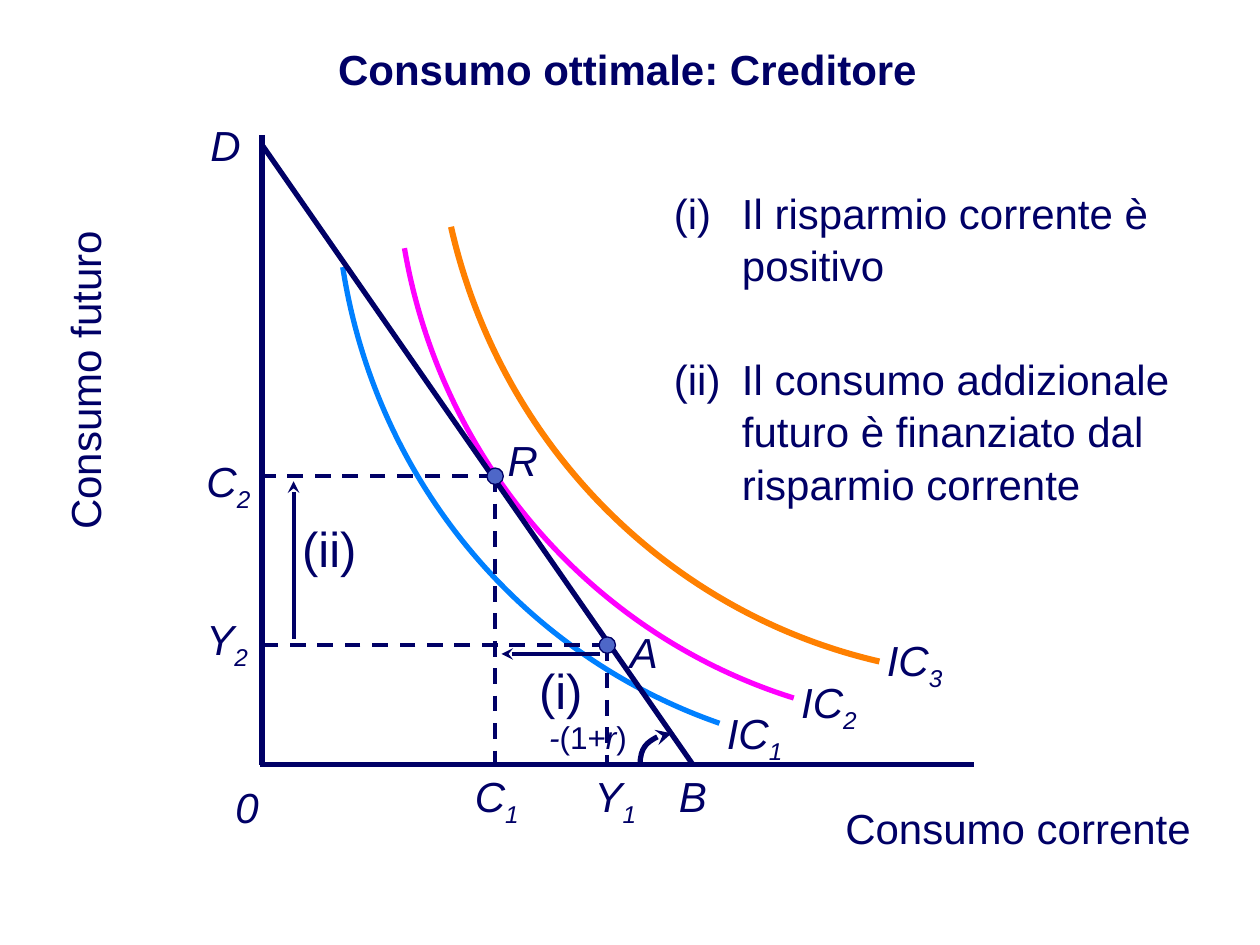
from dataclasses import dataclass

from lxml.etree import SubElement
from pptx import Presentation
from pptx.dml.color import RGBColor as Color
from pptx.enum.dml import MSO_LINE_DASH_STYLE as Dash
from pptx.enum.shapes import MSO_CONNECTOR as Connector, MSO_SHAPE as Shape
from pptx.enum.text import MSO_ANCHOR as Anchor, MSO_AUTO_SIZE as AutoSize, PP_ALIGN as Align
from pptx.oxml.ns import qn
from pptx.util import Inches, Pt


@dataclass(frozen=True)
class Theme:
    font: str = "Arial"
    ink: str = "000066"
    point: str = "4E67C8"
    low: str = "0080FF"
    middle: str = "FF00FF"
    high: str = "FF8000"
    small: int = 18
    body: int = 24
    large: int = 28


theme = Theme()
deck = Presentation()
deck.slide_width, deck.slide_height = Inches(10), Inches(7.5)
page = deck.slides.add_slide(deck.slide_layouts[5])
shapes = page.shapes
column = deck.slide_width / 100
row = deck.slide_height / 75


def add_span(para, text, size=theme.body, italic=False, bold=False, subscript=False):
    span = para.add_run()
    span.text = text
    font = span.font
    font.name, font.size, font.italic, font.bold = theme.font, Pt(size), italic, bold
    font.color.rgb = Color.from_string(theme.ink)
    if subscript:
        span._r.get_or_add_rPr().set("baseline", "-25000")


def style_line(shape, width, color=theme.ink, dashed=False, arrow=None):
    line = shape.line
    line.width = Pt(width)
    line.color.rgb = Color.from_string(color)
    if dashed:
        line.dash_style = Dash.DASH
    properties = shape._element.spPr
    if arrow:
        SubElement(properties.find(qn("a:ln")), qn(f"a:{arrow}")).set("type", "stealth")
    SubElement(properties, qn("a:effectLst"))


title = shapes.title
title.left, title.top = 0, round(2.1 * row)
title.width, title.height = round(99.6 * column), round(6.7 * row)
title.text_frame.auto_size = AutoSize.NONE
title.text_frame.vertical_anchor = Anchor.MIDDLE
para = title.text_frame.paragraphs[0]
para.alignment = Align.CENTER
add_span(para, "Consumo ottimale: Creditore", bold=True)

axis_x, axis_y = 20.8, 60.7
optimum_x, optimum_y = 39.3, 37.8
income_x, income_y = 48.2, 51.2

curves = [
    (theme.low, 3, None, [(27.2, 21.2), (29.8, 38), (41.3, 51.9), (57.1, 57.4)]),
    (theme.middle, 3, None, [(32.1, 19.7), (35, 36.6), (47, 50.4), (63, 55.4)]),
    (theme.high, 3.5, None, [(35.8, 18), (39.7, 35.2), (52.9, 48.6), (69.8, 52.5)]),
    (theme.ink, 3, "headEnd", [(53.3, 58.2), (52, 58.2), (50.8, 59.3), (50.8, axis_y)]),
]
for color, width, arrow, controls in curves:
    start, *bends = [(round(x * column), round(y * row)) for x, y in controls]
    builder = shapes.build_freeform(*start)
    builder.add_line_segments(bends, close=False)
    curve = builder.convert_to_shape()
    curve.fill.background()
    path = curve._element.find(".//" + qn("a:path"))
    segments = path.findall(qn("a:lnTo"))
    bezier = SubElement(path, qn("a:cubicBezTo"))
    for segment in segments:
        bezier.append(segment[0])
        path.remove(segment)
    style_line(curve, width, color, arrow=arrow)

lines = [
    ((axis_x, 10.7), (axis_x, axis_y), 3, False, None),
    ((20.6, axis_y), (77.3, axis_y), 3, False, None),
    ((55, axis_y), (axis_x, 11.5), 3, False, None),
    ((income_x, income_y), (axis_x, income_y), 2.25, True, None),
    ((income_x, income_y), (income_x, axis_y), 2.25, True, None),
    ((optimum_x, optimum_y), (axis_x, optimum_y), 2.25, True, None),
    ((optimum_x, optimum_y), (optimum_x, axis_y), 2.25, True, None),
    ((47.6, 51.9), (39.8, 51.9), 2.25, False, "tailEnd"),
    ((23.3, 50.7), (23.3, 38.2), 2.25, False, "tailEnd"),
]
for (x1, y1), (x2, y2), width, dashed, arrow in lines:
    ends = [round(v) for v in (x1 * column, y1 * row, x2 * column, y2 * row)]
    connector = shapes.add_connector(Connector.STRAIGHT, *ends)
    style_line(connector, width, dashed=dashed, arrow=arrow)

dot = 1.3
for x, y in [(optimum_x, optimum_y), (income_x, income_y)]:
    point = shapes.add_shape(
        Shape.OVAL, round((x - dot / 2) * column), round((y - dot / 2) * row),
        round(dot * column), round(dot * row))
    point.fill.solid()
    point.fill.fore_color.rgb = Color.from_string(theme.point)
    style_line(point, 0.75)

plain, slanted = {}, {"italic": True}
lower = {"italic": True, "subscript": True}
large, small = {"size": theme.large}, {"size": theme.small}
small_slanted = {"size": theme.small, "italic": True}
centered = [(name, x, y) for name, x, y in [
    ("0", 16.7, 61.5), ("A", 48.2, 49.2), ("B", 52.1, 60.7), ("D", 15, 9), ("R", 38.6, 34)]]
indexed = [
    ("Y", "1", 46.2, 60.7), ("Y", "2", 15.4, 48.2), ("C", "1", 36.7, 60.7),
    ("C", "2", 15.4, 35.7), ("IC", "1", 56.7, 55.7), ("IC", "2", 62.6, 53.2),
    ("IC", "3", 69.4, 49.9)]
labels = [
    ((-12, 27.7, 37.4, 5), 270, Align.CENTER, [("Consumo futuro", plain)]),
    ((63.3, 63.2, 35, 5), 0, Align.CENTER, [("Consumo corrente", plain)]),
    ((41.8, 51.9, 7.5, 5.7), 0, Align.LEFT, [("(i)", large)]),
    ((23, 40.7, 7.5, 5.7), 0, Align.LEFT, [("(ii)", large)]),
    ((42.6, 56.5, 9, 4), 0, Align.LEFT, [
        ("-", small_slanted), ("(1+", small), ("r", small_slanted), (")", small)]),
]
labels += [((x, y, 5.8, 5), 0, Align.CENTER, [(name, slanted)]) for name, x, y in centered]
labels += [((x, y, 7.5, 5), 0, Align.LEFT, [(name, slanted), (index, lower)])
           for name, index, x, y in indexed]
for (x, y, width, height), rotation, alignment, spans in labels:
    box = shapes.add_textbox(
        round(x * column), round(y * row), round(width * column), round(height * row))
    box.rotation = rotation
    box.text_frame.word_wrap = True
    para = box.text_frame.paragraphs[0]
    para.alignment = alignment
    for text, style in spans:
        add_span(para, text, **style)

notes = [
    (14.2, 9.1, True, "Il risparmio corrente è positivo"),
    (27.4, 13.1, False,
     "(ii)\tIl consumo addizionale futuro è finanziato dal risparmio corrente"),
]
for y, height, numbered, text in notes:
    box = shapes.add_textbox(
        round(52.5 * column), round(y * row), round(47.5 * column), round(height * row))
    box.text_frame.word_wrap = True
    para = box.text_frame.paragraphs[0]
    properties = para._p.get_or_add_pPr()
    hanging = round(5.4 * column)
    properties.set("marL", str(hanging))
    properties.set("indent", str(-hanging))
    if numbered:
        font = SubElement(properties, qn("a:buFont"))
        font.set("typeface", theme.font)
        SubElement(properties, qn("a:buAutoNum")).set("type", "romanLcParenBoth")
    para.line_spacing = 1.04
    add_span(para, text)

deck.save("out.pptx")
